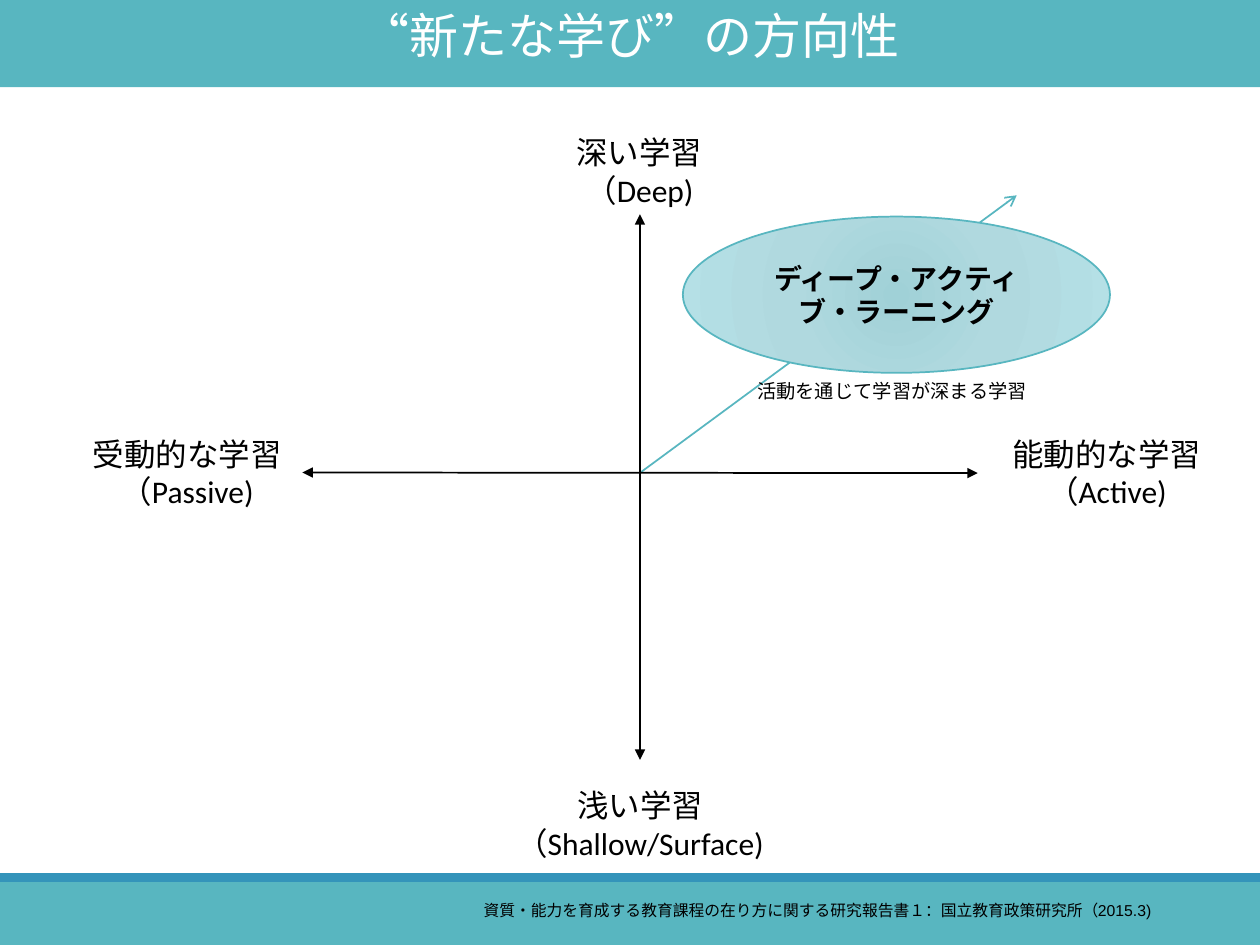
from pptx import Presentation
from pptx.dml.color import RGBColor
from pptx.enum.shapes import MSO_CONNECTOR as CONN, MSO_SHAPE as SHAPE
from pptx.enum.text import MSO_ANCHOR as ANCHOR, MSO_AUTO_SIZE as FIT, PP_ALIGN as ALIGN
from pptx.oxml import parse_xml
from pptx.oxml.ns import nsdecls, qn
from pptx.util import Pt
from lxml.etree import SubElement

COLORS = {"teal": "58B6C0", "blue": "3494BA", "black": "000000", "white": "FFFFFF"}
GLOW = [(0, "A0D1D7"), (45, "B0D9DF"), (100, "B5E0E6")]
CJK = "Noto Sans CJK JP"


class Deck:
    """Hold the style and the current slide, and draw each kind of element."""

    def __init__(self, prs):
        self.slide = prs.slides.add_slide(prs.slide_layouts[5])
        self.shapes = self.slide.shapes

    def color(self, name):
        return RGBColor.from_string(COLORS[name])

    def fill_text(self, sp, text, align=ALIGN.CENTER, color="black", anchor=ANCHOR.TOP,
                  fit=FIT.SHAPE_TO_FIT_TEXT, **font):
        tf = sp.text_frame
        frame = {"text": text, "word_wrap": True, "auto_size": fit, "vertical_anchor": anchor}
        for key, value in frame.items():
            setattr(tf, key, value)
        for p in tf.paragraphs:
            p.alignment = align
            for r in p.runs:
                for key, value in font.items():
                    setattr(r.font, key, value)
                r.font.color.rgb = self.color(color)
                SubElement(r._r.get_or_add_rPr(), qn("a:ea"), typeface=CJK)

    def title(self, text, box, fill, **style):
        sp = self.shapes.title
        for key, value in zip(("left", "top", "width", "height"), box):
            setattr(sp, key, Pt(value))
        sp.fill.solid()
        sp.fill.fore_color.rgb = self.color(fill)
        self.fill_text(sp, text, **style)

    def shape(self, kind, box, fill):
        sp = self.shapes.add_shape(kind, *map(Pt, box))
        sp.shadow.inherit = False
        sp.fill.solid()
        sp.fill.fore_color.rgb = self.color(fill)
        sp.line.fill.background()
        return sp

    def glow_ellipse(self, box, text, **style):
        sp = self.shape(SHAPE.OVAL, box, "teal")
        stops = "".join(f'<a:gs pos="{pos * 1000}"><a:srgbClr val="{rgb}"/></a:gs>'
                        for pos, rgb in GLOW)
        grad = parse_xml(
            f'<a:gradFill {nsdecls("a")} rotWithShape="1"><a:gsLst>{stops}</a:gsLst>'
            '<a:path path="circle"><a:fillToRect l="100000" t="100000" r="100000" b="100000"/>'
            '</a:path></a:gradFill>')
        spPr = sp._element.spPr
        spPr.replace(spPr.find(qn("a:solidFill")), grad)
        sp.line.color.rgb = self.color("teal")
        sp.line.width = Pt(1)
        self.fill_text(sp, text, anchor=ANCHOR.MIDDLE, fit=FIT.NONE, **style)

    def text(self, box, text, **style):
        sp = self.shapes.add_textbox(*map(Pt, box))
        self.fill_text(sp, text, **style)
        return sp

    def arrow(self, start, end, color="black", **ends):
        cx = self.shapes.add_connector(CONN.STRAIGHT, *map(Pt, start + end))
        cx.line.color.rgb = self.color(color)
        cx.line.width = Pt(1)
        ln = cx.line._get_or_add_ln()
        for tag, kind in ends.items():
            SubElement(ln, qn(f"a:{tag}"), type=kind)
        SubElement(cx._element.spPr, qn("a:effectLst"))
        return cx


def main():
    prs = Presentation()
    prs.slide_width, prs.slide_height = Pt(720), Pt(540)
    deck = Deck(prs)
    deck.shape(SHAPE.RECTANGLE, (0, 504, 720, 36), "teal")
    deck.shape(SHAPE.RECTANGLE, (0, 499, 720, 5), "blue")
    deck.title("“新たな学び”の方向性", (0, -0.7, 720, 41), "teal", color="white",
               anchor=ANCHOR.MIDDLE, name=CJK, size=Pt(28))

    center = (365.7, 270.2)
    deck.arrow(center, (581, 111.6), "teal", tailEnd="arrow")
    both = {"headEnd": "triangle", "tailEnd": "triangle"}
    horizontal = deck.arrow((172.8, 270), (558.7, 270.4), **both)
    deck.arrow((center[0], 122.4), (center[0], 434.2), **both)

    labels = {
        "deep": ("深い学習\n（Deep)", 306, 72.7, 118.8),
        "passive": ("受動的な学習\n（Passive)", 33.1, 244.8, 147.6),
        "active": ("能動的な学習\n（Active)", 558.7, 244.8, 147.6),
        "shallow": ("浅い学習\n（Shallow/Surface)", 277.9, 445.7, 175.7),
    }
    boxes = {key: deck.text((x, y, w, 51.1), text, name="Calibri", size=Pt(18))
             for key, (text, x, y, w) in labels.items()}
    horizontal.end_connect(boxes["active"], 1)

    deck.glow_ellipse((390.2, 123.8, 244.1, 89.3), "ディープ・アクティブ・ラーニング",
                      name="Calibri", size=Pt(16), bold=True)
    deck.text((425.5, 213.1, 178.6, 20.9), "活動を通じて学習が深まる学習",
              align=ALIGN.LEFT, name="Calibri", size=Pt(11))
    deck.text((269.3, 511.2, 408.2, 18),
              "資質・能力を育成する教育課程の在り方に関する研究報告書１：国立教育政策研究所（2015.3)",
              align=ALIGN.LEFT, name="Arial", size=Pt(9))
    prs.save("out.pptx")


if __name__ == "__main__":
    main()
